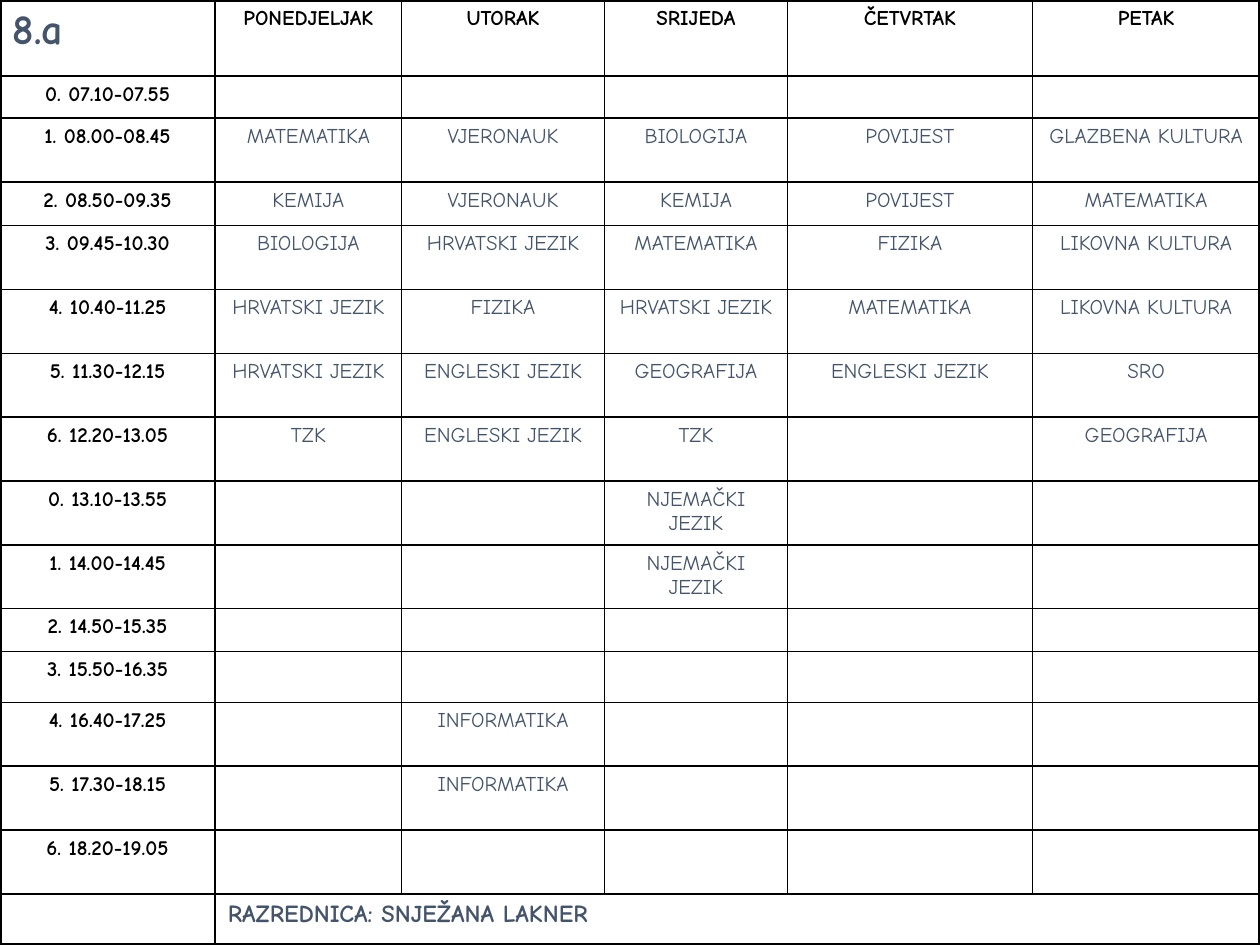
"""Build the weekly timetable of class 8.a as one table."""
from lxml import etree
from pptx import Presentation
from pptx.dml.color import RGBColor
from pptx.enum.text import PP_ALIGN
from pptx.oxml.ns import qn
from pptx.util import Pt

LEFT, CENTER = PP_ALIGN.LEFT, PP_ALIGN.CENTER
COLORS = {"black": "000000", "slate": "44546A"}
FONT = "Comic Neue"
COLUMN_WIDTHS = [123, 106.5, 116, 104.5, 140, 130]
ROW_HEIGHTS = [43.5, 24, 36.5, 25] + [36.5] * 6 + [24.5, 29] + [36.5] * 3 + [29]
THIN, THICK = 1, 2.25

TIMETABLE = [
    ["8.a", "PONEDJELJAK", "UTORAK", "SRIJEDA", "ČETVRTAK", "PETAK"],
    ["0. 07.10-07.55", "", "", "", "", ""],
    ["1. 08.00-08.45", "MATEMATIKA", "VJERONAUK", "BIOLOGIJA", "POVIJEST", "GLAZBENA KULTURA"],
    ["2. 08.50-09.35", "KEMIJA", "VJERONAUK", "KEMIJA", "POVIJEST", "MATEMATIKA"],
    ["3. 09.45-10.30", "BIOLOGIJA", "HRVATSKI JEZIK", "MATEMATIKA", "FIZIKA", "LIKOVNA KULTURA"],
    ["4. 10.40-11.25", "HRVATSKI JEZIK", "FIZIKA", "HRVATSKI JEZIK", "MATEMATIKA", "LIKOVNA KULTURA"],
    ["5. 11.30-12.15", "HRVATSKI JEZIK", "ENGLESKI JEZIK", "GEOGRAFIJA", "ENGLESKI JEZIK", "SRO"],
    ["6. 12.20-13.05", "TZK", "ENGLESKI JEZIK", "TZK", "", "GEOGRAFIJA"],
    ["0. 13.10-13.55", "", "", "NJEMAČKI JEZIK", "", ""],
    ["1. 14.00-14.45", "", "", "NJEMAČKI JEZIK", "", ""],
    ["2. 14.50-15.35", "", "", "", "", ""],
    ["3. 15.50-16.35", "", "", "", "", ""],
    ["4. 16.40-17.25", "", "INFORMATIKA", "", "", ""],
    ["5. 17.30-18.15", "", "INFORMATIKA", "", "", ""],
    ["6. 18.20-19.05", "", "", "", "", ""],
    ["", "RAZREDNICA: SNJEŽANA LAKNER", "", "", "", ""],
]
LAST_ROW, LAST_COLUMN = len(ROW_HEIGHTS) - 1, len(COLUMN_WIDTHS) - 1

HEADING = {"size": 12, "bold": True, "color": "black", "align": CENTER}
SUBJECT = {"size": 12, "bold": False, "color": "slate", "align": CENTER}
SPECIAL = {
    (0, 0): {"size": 24, "bold": True, "color": "slate", "align": LEFT},
    (LAST_ROW, 1): {"size": 14, "bold": True, "color": "slate", "align": LEFT},
}


def write_text(cell, text, style):
    """Write one formatted paragraph, or size the empty one."""
    para = cell.text_frame.paragraphs[0]
    para.alignment = style["align"]
    if not text:
        etree.SubElement(para._p, qn("a:endParaRPr"), sz=str(style["size"] * 100))
        return
    span = para.add_run()
    span.text = text
    span.font.color.rgb = RGBColor.from_string(COLORS[style["color"]])
    values = {"name": FONT, "size": Pt(style["size"]), "bold": style["bold"]}
    for name, value in values.items():
        setattr(span.font, name, value)


def draw_borders(cell, widths):
    """Give the cell black lines, in the order left, right, top, bottom."""
    properties = cell._tc.get_or_add_tcPr()
    for position, (side, width) in enumerate(widths.items()):
        line = etree.Element(qn(f"a:ln{side}"), w=str(Pt(width)))
        fill = etree.SubElement(line, qn("a:solidFill"))
        etree.SubElement(fill, qn("a:srgbClr"), val=COLORS["black"])
        properties.insert(position, line)


deck = Presentation()
deck.slide_width, deck.slide_height = Pt(720), Pt(540)
page = deck.slides.add_slide(deck.slide_layouts[6])
frame = page.shapes.add_table(
    len(ROW_HEIGHTS), len(COLUMN_WIDTHS), Pt(0), Pt(0), Pt(720), Pt(540)
)
table = frame.table
table.first_row = False
table.horz_banding = False
for column, width in zip(table.columns, COLUMN_WIDTHS):
    column.width = Pt(width)
for row, height in zip(table.rows, ROW_HEIGHTS):
    row.height = Pt(height)
table.cell(LAST_ROW, 1).merge(table.cell(LAST_ROW, LAST_COLUMN))

for r, texts in enumerate(TIMETABLE):
    for c, text in enumerate(texts):
        cell = table.cell(r, c)
        cell.fill.background()
        base = HEADING if r == 0 or c == 0 else SUBJECT
        write_text(cell, text, SPECIAL.get((r, c), base))
        right_edge = c == LAST_COLUMN or (cell.is_merge_origin and r == LAST_ROW)
        draw_borders(cell, {
            "L": THICK if c == 0 else THIN,
            "R": THICK if right_edge else THIN,
            "T": THICK if r == 0 else THIN,
            "B": THICK if r == LAST_ROW else THIN,
        })

deck.save("out.pptx")
